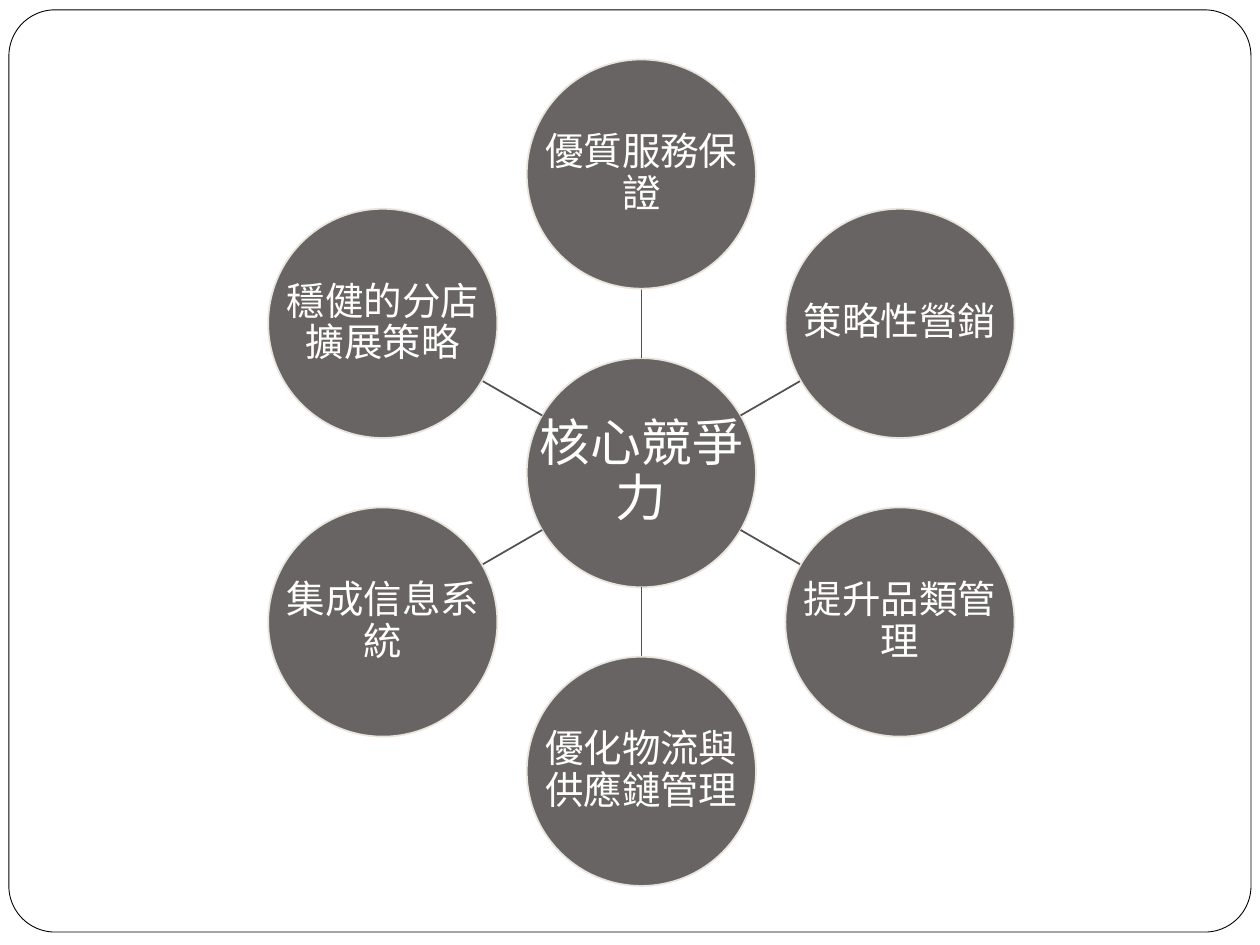
from math import cos, radians, sin

from lxml.etree import SubElement
from pptx import Presentation
from pptx.dml.color import RGBColor
from pptx.enum.shapes import MSO_CONNECTOR, MSO_SHAPE
from pptx.enum.text import MSO_ANCHOR, PP_ALIGN
from pptx.oxml.ns import qn
from pptx.util import Cm, Pt

COLORS = {
    "white": "FFFFFF",
    "frame": "000000",
    "circle": "696464",
    "outline": "E9E5DC",
    "spoke": "545050",
}
FONT = "Times New Roman"
CENTER_X, CENTER_Y = 12.93, 9.53
RADIUS = 2.31
ORBIT = 6.02
HUB = "核心競爭力"
STRENGTHS = [
    "優質服務保證",
    "策略性營銷",
    "提升品類管理",
    "優化物流與供應鏈管理",
    "集成信息系統",
    "穩健的分店擴展策略",
]


def rgb(name):
    return RGBColor.from_string(COLORS[name])


def set_line(line, color, width):
    line.color.rgb = rgb(color)
    line.width = Pt(width)


def add_filled_shape(s, kind, box, fill, line, width):
    shape = s.shapes.add_shape(kind, *map(Cm, box))
    shape.shadow.inherit = False
    shape.fill.solid()
    shape.fill.fore_color.rgb = rgb(fill)
    set_line(shape.line, line, width)
    return shape


def add_label(s, box, text, size):
    tf = s.shapes.add_textbox(*map(Cm, box)).text_frame
    frame_format = {
        "word_wrap": True,
        "vertical_anchor": MSO_ANCHOR.MIDDLE,
        **{f"margin_{side}": Cm(0.05) for side in ("left", "top", "right", "bottom")},
    }
    for name, value in frame_format.items():
        setattr(tf, name, value)
    p = tf.paragraphs[0]
    p.alignment = PP_ALIGN.CENTER
    p.line_spacing = 0.9
    r = p.add_run()
    r.text = text
    for name, value in {"name": FONT, "size": Pt(size)}.items():
        setattr(r.font, name, value)
    r.font.color.rgb = rgb("white")


def add_circle(s, x, y, text, size):
    """Draw a circle centred on (x, y) with a label as wide as the circle."""
    box = (x - RADIUS, y - RADIUS, 2 * RADIUS, 2 * RADIUS)
    add_filled_shape(s, MSO_SHAPE.OVAL, box, "circle", "outline", 1)
    add_label(s, box, text, size)


def polar(distance, angle):
    """Return the point at a distance and angle from the hub's centre."""
    return CENTER_X + distance * cos(angle), CENTER_Y + distance * sin(angle)


def add_spoke(s, angle):
    ends = polar(RADIUS, angle) + polar(ORBIT - RADIUS, angle)
    spoke = s.shapes.add_connector(MSO_CONNECTOR.STRAIGHT, *map(Cm, ends))
    set_line(spoke.line, "spoke", 1)
    SubElement(spoke._element.spPr, qn("a:effectLst"))


def main():
    prs = Presentation()
    prs.slide_width, prs.slide_height = Cm(25.4), Cm(19.05)
    s = prs.slides.add_slide(prs.slide_layouts[6])

    frame = add_filled_shape(
        s, MSO_SHAPE.ROUNDED_RECTANGLE, (0.18, 0.2, 25.04, 18.59), "white", "frame", 0.5
    )
    frame.adjustments[0] = 0.05

    add_circle(s, CENTER_X, CENTER_Y, HUB, 29)
    for i, strength in enumerate(STRENGTHS):
        angle = radians(360 / len(STRENGTHS) * i - 90)
        add_spoke(s, angle)
        add_circle(s, *polar(ORBIT, angle), strength, 22)

    prs.save("out.pptx")


if __name__ == "__main__":
    main()
